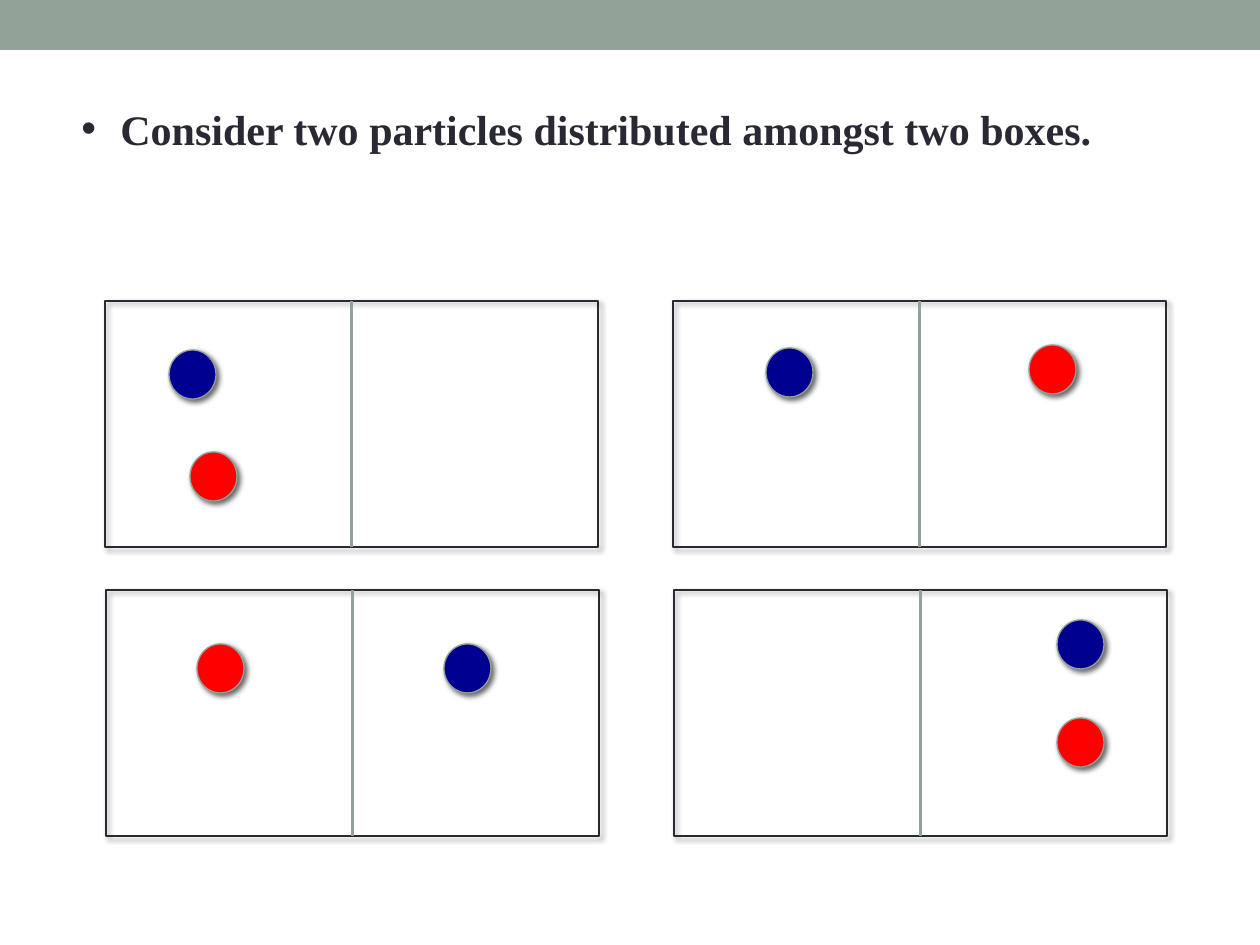
from dataclasses import dataclass

import pptx
import pptx.dml.color
import pptx.enum.shapes
import pptx.enum.text
import pptx.oxml
import pptx.oxml.ns
import pptx.util

PX = 914400 / 126
SHAPE = pptx.enum.shapes.MSO_SHAPE


@dataclass(frozen=True)
class Theme:
    sage: str = "93A299"
    ink: str = "292934"
    blue: str = "000090"
    red: str = "FF0000"
    font: str = "Times New Roman"
    statement_size: int = 24
    outline: float = 0.75
    divider: float = 2.08


THEME = Theme()


def px(length):
    return pptx.util.Emu(round(length * PX))


def rgb(color):
    return pptx.dml.color.RGBColor.from_string(color)


def xml(source):
    return pptx.oxml.parse_xml(
        source.replace("/>", f" {pptx.oxml.ns.nsdecls('a')}/>", 1)
        if source.endswith("/>") and source.count("<") == 1
        else source.replace(">", f" {pptx.oxml.ns.nsdecls('a')}>", 1))


def add_figure(slide, kind, box, fill=None, line=None, shadow=False):
    figure = slide.shapes.add_shape(kind, *map(px, box))
    figure.shadow.inherit = False
    if fill:
        figure.fill.solid()
        figure.fill.fore_color.rgb = rgb(fill)
    else:
        figure.fill.background()
    if line:
        figure.line.color.rgb = rgb(line)
        figure.line.width = pptx.util.Pt(THEME.outline)
    else:
        figure.line.fill.background()
    if shadow:
        effects = figure._element.spPr.find(pptx.oxml.ns.qn("a:effectLst"))
        effects.append(xml(
            '<a:outerShdw blurRad="38100" dist="25400" dir="2700000" rotWithShape="0">'
            '<a:srgbClr val="000000"><a:alpha val="60000"/></a:srgbClr></a:outerShdw>'))
    return figure


def add_bullet_text(slide, text, *, box, size, color, font, bold, indent):
    textbox = slide.shapes.add_textbox(*map(px, box))
    frame = textbox.text_frame
    frame.word_wrap = True
    frame.auto_size = pptx.enum.text.MSO_AUTO_SIZE.SHAPE_TO_FIT_TEXT
    paragraph = frame.paragraphs[0]
    properties = paragraph._p.get_or_add_pPr()
    properties.set("marL", str(px(indent)))
    properties.set("indent", str(-px(indent)))
    properties.append(xml('<a:spcBef><a:spcPct val="50000"/></a:spcBef>'))
    properties.append(xml('<a:buFont typeface="Arial"/>'))
    properties.append(xml('<a:buChar char="•"/>'))
    run = paragraph.add_run()
    run.text = text
    run.font.size = pptx.util.Pt(size)
    run.font.bold = bold
    run.font.name = font
    run.font.color.rgb = rgb(color)


def add_divided_box(slide, box, particles):
    """Draw a box split in half, with particles placed from its top left corner."""
    left, top, width, height = box
    frame = add_figure(slide, SHAPE.RECTANGLE, box, line=THEME.ink, shadow=True)

    middle = px(left + width / 2)
    divider = slide.shapes.add_connector(
        pptx.enum.shapes.MSO_CONNECTOR.STRAIGHT,
        middle, px(top), middle, px(top + height))
    divider.begin_connect(frame, 0)
    divider.end_connect(frame, 2)
    divider.line.color.rgb = rgb(THEME.sage)
    divider.line.width = pptx.util.Pt(THEME.divider)
    divider._element.spPr.append(xml("<a:effectLst/>"))

    for color, x, y in particles:
        add_figure(slide, SHAPE.OVAL, (left + x, top + y, 47, 49),
                   fill=color, line=THEME.sage, shadow=True)


def add_arrangements(slide, box):
    """Lay out the four ways to place two particles, as a two by two grid."""
    left, top, width, height = box
    box_width, box_height = 493, 246
    row_shift = 1
    blue, red = THEME.blue, THEME.red
    arrangements = [
        [(blue, 64, 49), (red, 85, 151)],
        [(blue, 93, 47), (red, 356, 44)],
        [(blue, 338, 54), (red, 91, 54)],
        [(blue, 383, 30), (red, 383, 128)],
    ]
    for index, particles in enumerate(arrangements):
        row, column = divmod(index, 2)
        x = left + column * (width - box_width) + row * row_shift
        y = top + row * (height - box_height)
        add_divided_box(slide, (x, y, box_width, box_height), particles)


def main():
    deck = pptx.Presentation()
    deck.slide_width, deck.slide_height = px(1260), px(945)
    slide = deck.slides.add_slide(deck.slide_layouts[6])
    add_figure(slide, SHAPE.RECTANGLE, (0, 0, 1260, 50), fill=THEME.sage)
    add_bullet_text(
        slide, "Consider two particles distributed amongst two boxes.",
        box=(69, 97, 1115, 63), size=THEME.statement_size, color=THEME.ink,
        font=THEME.font, bold=True, indent=39)
    add_arrangements(slide, (105, 301, 1061, 535))
    deck.save("out.pptx")


if __name__ == "__main__":
    main()
